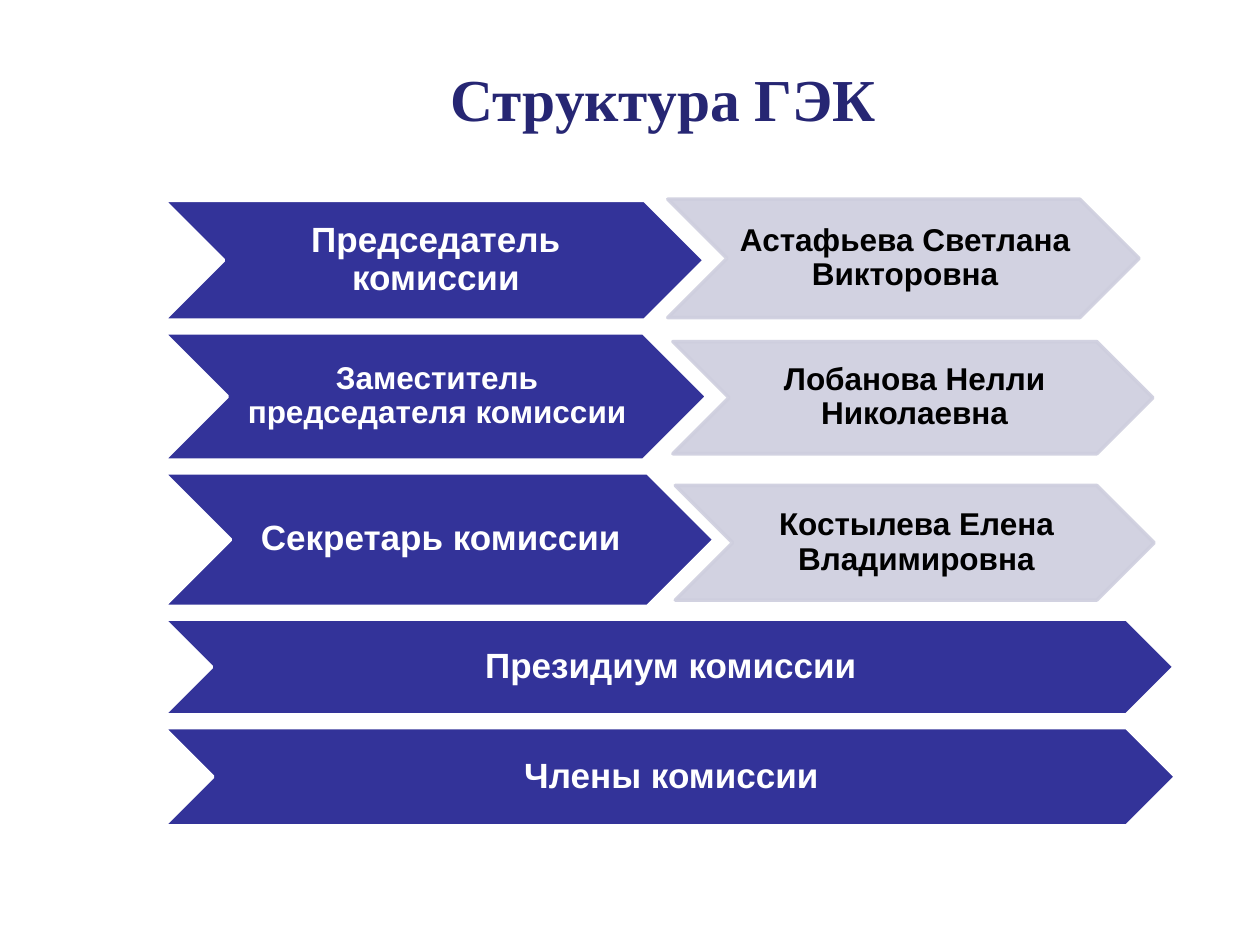
from lxml import etree
from pptx import Presentation
from pptx.dml.color import RGBColor
from pptx.enum.shapes import MSO_SHAPE
from pptx.enum.text import MSO_ANCHOR, PP_ALIGN
from pptx.oxml.ns import qn
from pptx.util import Pt

CHEVRON = MSO_SHAPE.CHEVRON
CENTER = PP_ALIGN.CENTER
TOP, MIDDLE = MSO_ANCHOR.TOP, MSO_ANCHOR.MIDDLE

COLORS = {
    "title": "262673",
    "role": "333399",
    "person": "CECEDE",
    "white": "FFFFFF",
    "black": "000000",
}
ROW_GAP = 7.3

# Role: text, width, height, size. Person: text, left, top in row, width, height.
ROWS = [
    (("Председатель комиссии", 308.9, 68.4, 20),
     ("Астафьева Светлана Викторовна", 288, -0.7, 269.3, 67.7)),
    (("Заместитель председателя комиссии", 310.3, 72.7, 18),
     ("Лобанова Нелли Николаевна", 290.9, 5, 274.3, 64.1)),
    (("Секретарь комиссии", 314.6, 76.3, 20),
     ("Костылева Елена Владимировна", 292.3, 7.2, 273.6, 65.5)),
    (("Президиум комиссии", 577.4, 54.7, 20), None),
    (("Члены комиссии", 578.2, 56.2, 20), None),
]


def color(name):
    return RGBColor.from_string(COLORS[name])


def style_paragraph(paragraph, font_name, size, color_name):
    paragraph.alignment = CENTER
    font = paragraph.font
    font.name, font.size, font.bold = font_name, Pt(size), True
    font.color.rgb = color(color_name)


def set_alpha(shape, percent):
    for color_element in shape._element.spPr.iter(qn("a:srgbClr")):
        etree.SubElement(color_element, qn("a:alpha")).set("val", str(percent * 1000))


def add_title(slide, left, top, width, height):
    title = slide.shapes.title
    title.left, title.top = Pt(left), Pt(top)
    title.width, title.height = Pt(width), Pt(height)
    frame = title.text_frame
    frame.text = "Структура ГЭК"
    frame.vertical_anchor = TOP
    style_paragraph(frame.paragraphs[0], "Times New Roman", 34, "title")


def add_chevron(slide, text, left, top, width, height, size, fill, line, text_color):
    chevron = slide.shapes.add_shape(CHEVRON, Pt(left), Pt(top), Pt(width), Pt(height))
    chevron.shadow.inherit = False
    chevron.fill.solid()
    chevron.fill.fore_color.rgb = color(fill)
    chevron.line.color.rgb = color(line)
    chevron.line.width = Pt(2)
    frame = chevron.text_frame
    frame.word_wrap = True
    frame.vertical_anchor = MIDDLE
    frame.margin_left, frame.margin_right = Pt(2), Pt(0)
    frame.margin_top = frame.margin_bottom = Pt(1)
    frame.text = text
    paragraph = frame.paragraphs[0]
    paragraph.line_spacing = 0.9
    style_paragraph(paragraph, "Arial", size, text_color)
    return chevron


def add_commission(slide, left, top):
    for (role, role_width, row_height, size), person in ROWS:
        add_chevron(slide, role, left, top, role_width, row_height, size,
                    "role", "white", "white")
        if person:
            name, offset_x, offset_y, width, height = person
            name_chevron = add_chevron(slide, name, left + offset_x, top + offset_y,
                                       width, height, 18, "person", "person", "black")
            set_alpha(name_chevron, 90)
        top += row_height + ROW_GAP


def main():
    deck = Presentation()
    deck.slide_width, deck.slide_height = Pt(720), Pt(540)
    slide = deck.slides.add_slide(deck.slide_layouts[5])
    add_title(slide, 133.2, 31.7, 491.8, 48.2)
    add_commission(slide, 93.6, 114.5)
    deck.save("out.pptx")


if __name__ == "__main__":
    main()
